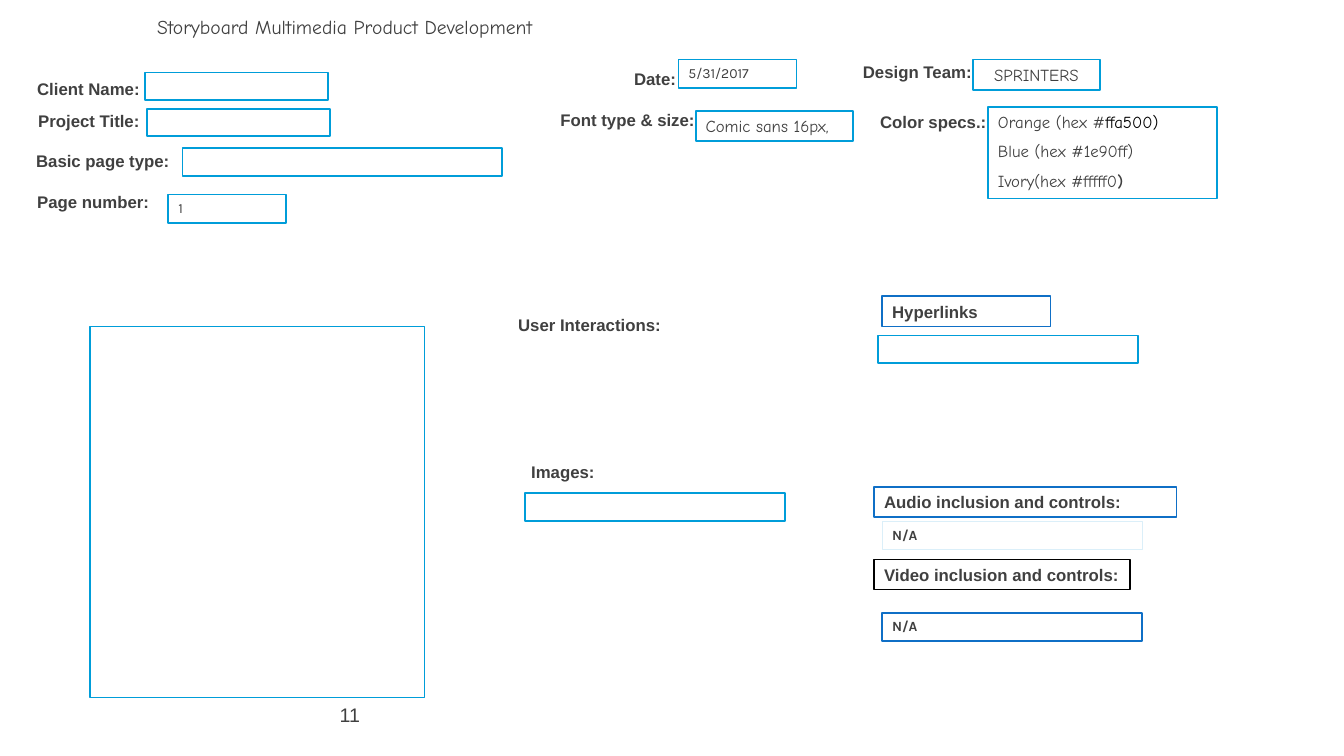
from pptx import Presentation
from pptx.dml.color import RGBColor
from pptx.enum.shapes import MSO_SHAPE
from pptx.enum.text import MSO_ANCHOR, MSO_AUTO_SIZE, PP_ALIGN
from pptx.util import Inches, Pt

HEX = {"ink": "404040", "black": "000000", "white": "FFFFFF",
       "cyan": "009DD9", "blue": "0F6FC6", "pale": "DBEFF9"}
HEAD = ("Arial", 12, True)
HAND = ("Comic Neue", 12, False)
NOTE = ("Karla", 10, False)
BOLD = ("Karla", 10, True)

deck = Presentation()
deck.slide_width, deck.slide_height = Inches(13.33), Inches(7.5)
slide = deck.slides.add_slide(deck.slide_layouts[6])


def write(shape, paras, font, align=PP_ALIGN.LEFT, wrap=True, grow=True):
    frame = shape.text_frame
    frame.word_wrap = wrap
    frame.vertical_anchor = MSO_ANCHOR.TOP
    frame.auto_size = MSO_AUTO_SIZE.SHAPE_TO_FIT_TEXT if grow else MSO_AUTO_SIZE.NONE
    face, size, bold = font
    for i, runs in enumerate(paras):
        para = frame.paragraphs[0] if i == 0 else frame.add_paragraph()
        para.alignment = align
        if i:
            para.space_before = Pt(6.5)
        for text, color, heavy in runs:
            run = para.add_run()
            run.text = text
            run.font.name = face
            run.font.size = Pt(size)
            run.font.bold = bold or heavy
            run.font.color.rgb = RGBColor.from_string(HEX[color])


def draw(place, line="cyan", weight=1.25, fill="white"):
    shape = slide.shapes.add_shape(MSO_SHAPE.RECTANGLE, *map(Inches, place))
    shape.shadow.inherit = False
    if fill:
        shape.fill.solid()
        shape.fill.fore_color.rgb = RGBColor.from_string(HEX[fill])
    else:
        shape.fill.background()
    if line:
        shape.line.color.rgb = RGBColor.from_string(HEX[line])
        shape.line.width = Pt(weight)
    else:
        shape.line.fill.background()
    return shape


labels = [
    ("Storyboard Multimedia Product Development", 1.46, 0.1, 9.25, 0.33, ("Comic Neue", 14, False)),
    ("Client Name:", 0.27, 0.73, 2.5, 0.3, HEAD),
    ("Project Title:", 0.28, 1.05, 1.31, 0.3, HEAD),
    ("Date:", 6.19, 0.63, 0.65, 0.3, HEAD),
    ("Design Team:", 8.46, 0.56, 1.41, 0.3, HEAD),
    ("Page number:", 0.27, 1.85, 1.4, 0.3, HEAD),
    ("Basic page type:", 0.26, 1.45, 1.54, 0.3, HEAD),
    ("Font type & size:", 5.46, 1.04, 2.33, 0.3, HEAD),
    ("Color specs.:", 8.63, 1.06, 1.58, 0.3, HEAD),
    ("Images:", 5.17, 4.53, 3, 0.3, HEAD),
]
for text, x, y, w, h, font in labels:
    label = slide.shapes.add_textbox(Inches(x), Inches(y), Inches(w), Inches(h))
    write(label, [[(text, "ink", False)]], font)

number = slide.shapes.add_textbox(Inches(2.17), Inches(6.92), Inches(1.5), Inches(0.42))
write(number, [[("11", "ink", False)]], ("Arial", 14, False), PP_ALIGN.RIGHT, grow=False)

blanks = [
    (1.44, 0.72, 1.81, 0.27),
    (1.46, 1.08, 1.81, 0.27),
    (1.81, 1.47, 3.17, 0.28),
    (8.71, 3.33, 2.58, 0.27),
    (5.21, 4.89, 2.58, 0.28),
    (0.89, 3.24, 3.32, 3.68),
]
for place in blanks:
    draw(place)

fields = [
    ("User Interactions:", (5.04, 3.07, 1.92, 0.3), None, HEAD),
    ("Hyperlinks", (8.75, 2.94, 1.67, 0.3), "blue", HEAD),
    ("Audio inclusion and controls:", (8.67, 4.83, 3, 0.3), "blue", HEAD),
    ("5/31/2017", (6.73, 0.59, 1.17, 0.28), "cyan", NOTE),
    ("1", (1.67, 1.93, 1.17, 0.28), "cyan", NOTE),
    ("Comic sans 16px,", (6.9, 1.1, 1.56, 0.3), "cyan", HAND),
    ("N/A", (8.75, 6.08, 2.58, 0.28), "blue", BOLD),
]
for text, place, line, font in fields:
    write(draw(place, line), [[(text, "ink", False)]], font)

team = draw((9.65, 0.59, 1.26, 0.3))
write(team, [[("SPRINTERS", "ink", False)]], HAND, PP_ALIGN.CENTER)

video = draw((8.67, 5.55, 2.54, 0.3), "black")
write(video, [[("Video inclusion and controls:", "ink", False)]], HEAD, wrap=False)

audio = draw((8.75, 5.17, 2.58, 0.28), "pale", 0.75, None)
write(audio, [[("N/A", "ink", False)]], BOLD)

colors = draw((9.8, 1.06, 2.27, 0.91))
write(colors, [
    [("Orange (hex #", "ink", False), ("ffa500)", "black", False)],
    [("Blue (hex #1e90ff)", "ink", False)],
    [("Ivory(hex #fffff0", "ink", False), (")", "ink", True)],
], HAND, grow=False)

deck.save("out.pptx")
